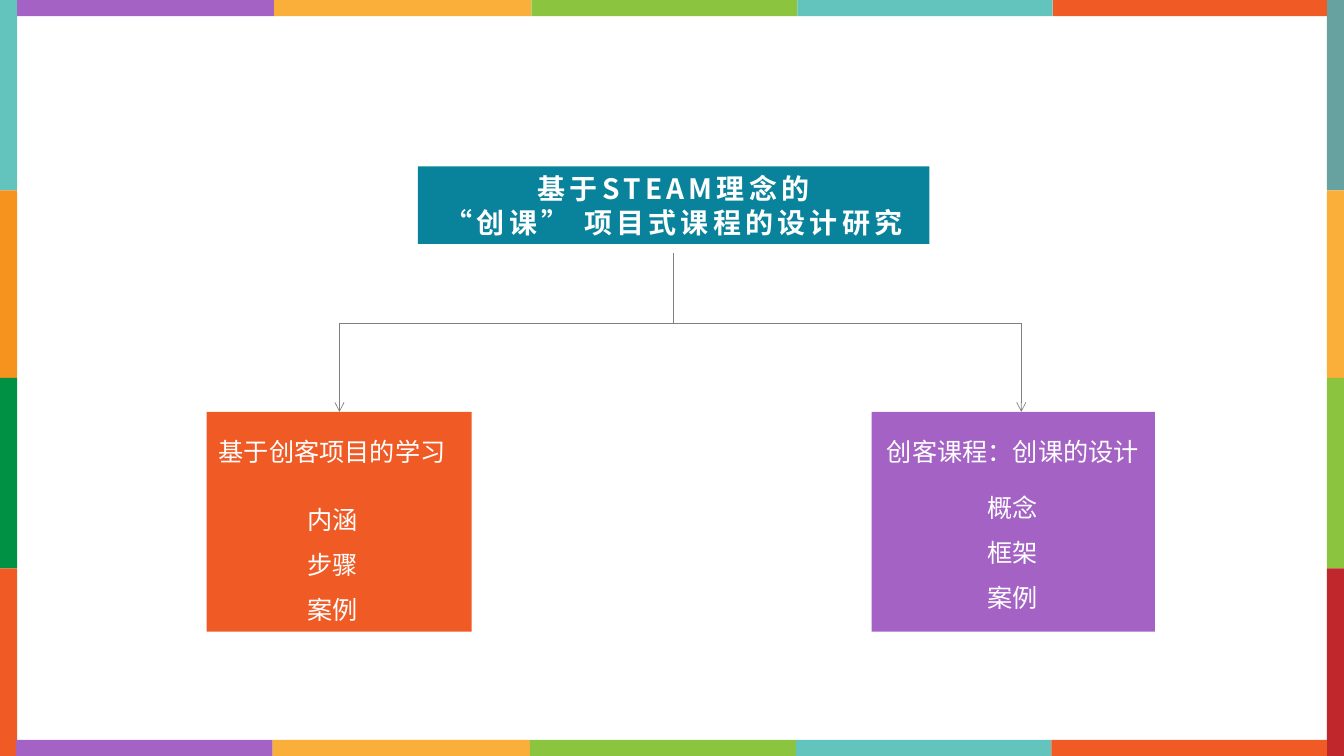
import itertools

import pptx
import pptx.dml.color
import pptx.enum.shapes
import pptx.enum.text
import pptx.oxml
import pptx.oxml.ns
import pptx.util
import lxml.etree

FONT = "Noto Sans CJK SC"
WHITE, GRAY, TEAL, ORANGE, PURPLE = "FFFFFF", "808080", "09839B", "F05A24", "A362C4"
AMBER, GREEN, AQUA = "FAAF3B", "8BC53F", "62C4BC"


def color(value):
    return pptx.dml.color.RGBColor.from_string(value)


def points(*values):
    return [pptx.util.Pt(value) for value in values]


def add_child(parent, tag, **attributes):
    return lxml.etree.SubElement(parent, pptx.oxml.ns.qn(tag), attributes)


def add_rectangle(slide, box, fill):
    kind = pptx.enum.shapes.MSO_SHAPE.RECTANGLE
    shape = slide.shapes.add_shape(kind, *points(*box))
    shape.shadow.inherit = False
    shape.fill.solid()
    shape.fill.fore_color.rgb = color(fill)
    shape.line.fill.background()
    return shape


def add_line(slide, start, end, arrow=False):
    kind = pptx.enum.shapes.MSO_CONNECTOR.STRAIGHT
    connector = slide.shapes.add_connector(kind, *points(*start, *end))
    connector.line.color.rgb = color(GRAY)
    connector.line.width = pptx.util.Pt(0.5)
    if arrow:
        add_child(connector.line._get_or_add_ln(), "a:tailEnd", type="arrow")
    add_child(connector._element.spPr, "a:effectLst")


def write_text(shape, lines, size, bold=False, tracking=0, line_spacing=1.0, wrap=True, anchor="MIDDLE"):
    frame = shape.text_frame
    frame.text = "\n".join(lines)
    frame.word_wrap = wrap
    frame.auto_size = pptx.enum.text.MSO_AUTO_SIZE.NONE
    frame.vertical_anchor = pptx.enum.text.MSO_ANCHOR[anchor]
    for paragraph in frame.paragraphs:
        paragraph.alignment = pptx.enum.text.PP_ALIGN.CENTER
        paragraph.line_spacing = line_spacing
        paragraph.space_before = pptx.util.Pt(0)
        paragraph.font.size = pptx.util.Pt(size)
        paragraph.font.bold = bold
        paragraph.font.color.rgb = color(WHITE)
        paragraph.font.name = FONT
        properties = paragraph._p.get_or_add_pPr()
        properties.set("marL", "0")
        properties.set("indent", "0")
        defaults = properties.find(pptx.oxml.ns.qn("a:defRPr"))
        defaults.set("spc", str(tracking * 100))
        add_child(defaults, "a:ea", typeface=FONT)
        defaults.addprevious(pptx.oxml.parse_xml(f"<a:buNone {pptx.oxml.ns.nsdecls('a')}/>"))


def place(slide, placeholder, box):
    placeholder.left, placeholder.top, placeholder.width, placeholder.height = points(*box)
    slide.shapes._spTree.append(placeholder._element)


def add_frame(slide, box):
    left, top, width, height = box
    side, band = 12.25, 11.5
    rows = [0, 136, 270, 406, height]
    right = left + width - side
    sides = [
        (left, [AQUA, "F6921E", "009145", ORANGE]),
        (right, ["67A1A0", AMBER, GREEN, "C0272D"]),
    ]
    for x, fills in sides:
        for (start, end), fill in zip(itertools.pairwise(rows), fills):
            add_rectangle(slide, (x, top + start, side, end - start), fill)
    columns = [side, 195.75, 379.5, 569.5, 752]
    for y, shift in [(top, 0), (top + height - band, -1)]:
        edges = [left + column + shift for column in columns] + [right]
        for (start, end), fill in zip(itertools.pairwise(edges), [PURPLE, AMBER, GREEN, AQUA, ORANGE]):
            add_rectangle(slide, (start, y, end - start, band), fill)


def add_heading(slide, box, lines):
    title = slide.shapes.title
    place(slide, title, box)
    title.fill.solid()
    title.fill.fore_color.rgb = color(TEAL)
    write_text(title, lines, 20, bold=True, tracking=3)


def add_branches(slide, box, stem):
    left, top, width, height = box
    right, middle = left + width, top + height * 0.44
    add_line(slide, (left, middle), (right, middle))
    for x in (left, right):
        add_line(slide, (x, middle), (x, top + height), arrow=True)
    add_line(slide, (stem, top), (stem, middle))


def add_panel(slide, box, fill, label, label_span, placeholder, items, list_offset):
    left, top, width, height = box
    add_rectangle(slide, box, fill)
    label_left, label_width = label_span
    label_shape = add_rectangle(slide, (left + label_left, top + 13.7, label_width, 29), fill)
    write_text(label_shape, [label], 18, wrap=False)
    list_left, list_top = list_offset
    place(slide, placeholder, (left + list_left, top + list_top, 198.7, 105))
    write_text(placeholder, items, 18, line_spacing=1.5, anchor="TOP")


def main():
    presentation = pptx.Presentation()
    presentation.slide_width, presentation.slide_height = points(960, 540)
    slide = presentation.slides.add_slide(presentation.slide_layouts[3])
    first_list, second_list = slide.placeholders[1], slide.placeholders[2]
    add_frame(slide, (0, 0, 960, 540))
    add_branches(slide, (242.5, 180.7, 487, 113.5), 481)
    add_heading(slide, (298.4, 118.8, 365.5, 55.5), ["基于STEAM理念的", "“创课” 项目式课程的设计研究"])
    add_panel(slide, (147.6, 294.2, 189.4, 157), ORANGE, "基于创客项目的学习", (1.4, 176.4),
              first_list, ["内涵", "步骤", "案例"], (-9.4, 51.4))
    add_panel(slide, (622.6, 294.2, 202.4, 157), PURPLE, "创客课程：创课的设计", (3.8, 194.4),
              second_list, ["概念", "框架", "案例"], (1.6, 42.8))
    presentation.save("out.pptx")


if __name__ == "__main__":
    main()
